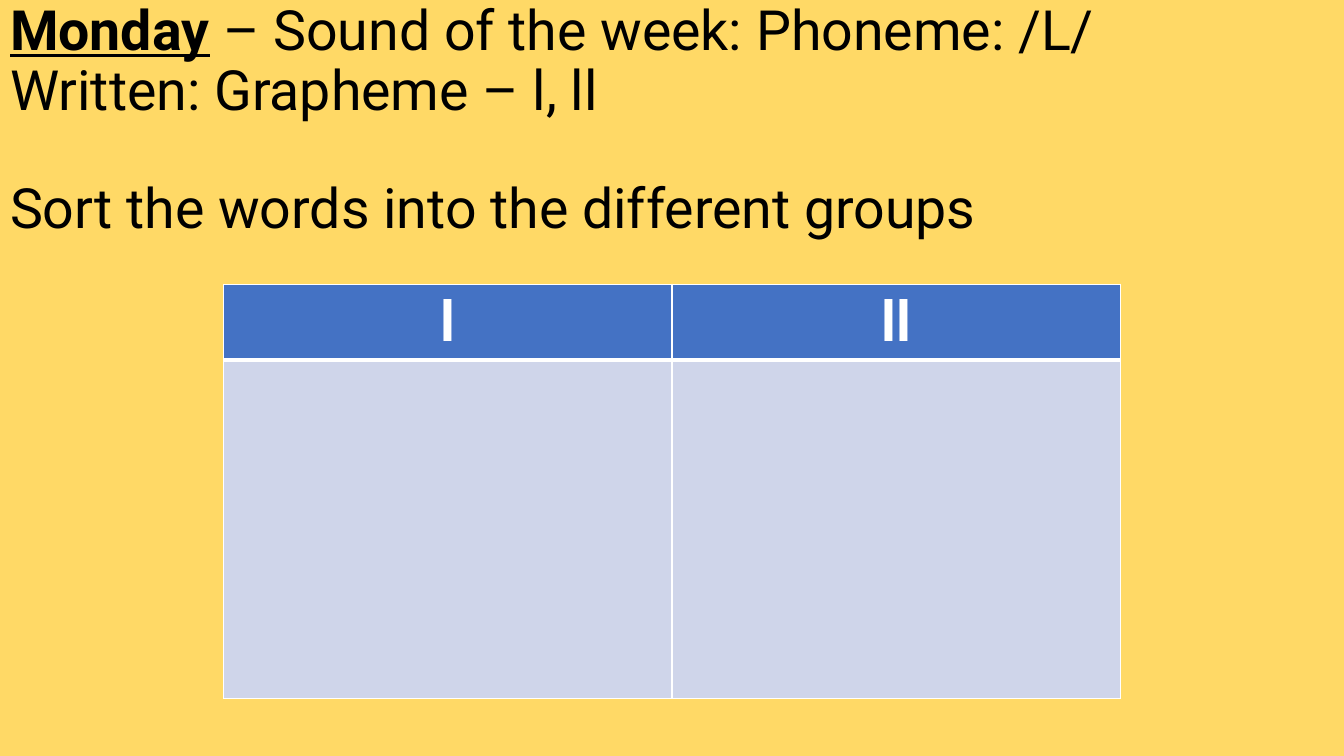
import pptx
import pptx.dml.color
import pptx.enum.text
import pptx.oxml
import pptx.oxml.ns
import pptx.util

Inches = pptx.util.Inches
Pt = pptx.util.Pt
ALIGN = pptx.enum.text.PP_ALIGN
FONT = "Roboto"


def paint(fill, color):
    """Give a fill one solid colour from a hex string."""
    fill.solid()
    fill.fore_color.rgb = pptx.dml.color.RGBColor.from_string(color)


def set_values(target, values):
    """Set each attribute named in a dict of format values."""
    for name, value in values.items():
        setattr(target, name, value)


def add_span(para, text, color, **values):
    """Add a formatted run of text to a paragraph."""
    span = para.add_run()
    span.text = text
    set_values(span.font, {"name": FONT, **values})
    paint(span.font.fill, color)


def fill_title(title):
    """Place the title and write the sound of the week and the task."""
    set_values(title, {"left": Inches(0), "top": Inches(0.48),
                       "width": Inches(11.5), "height": Inches(1.45)})
    frame = title.text_frame
    set_values(frame, {"word_wrap": True,
                       "auto_size": pptx.enum.text.MSO_AUTO_SIZE.NONE,
                       "vertical_anchor": pptx.enum.text.MSO_ANCHOR.MIDDLE})
    sound, task = frame.paragraphs[0], frame.add_paragraph()
    for para, space in ((sound, 0), (task, 42)):
        set_values(para, {"alignment": ALIGN.LEFT, "line_spacing": 0.9,
                          "space_before": Pt(space)})
    size = Pt(39.6)
    add_span(sound, "Monday", "000000", size=size, bold=True, underline=True)
    add_span(sound, " – Sound of the week: Phoneme: /L/ Written: Grapheme – l, ll",
             "000000", size=size, bold=False)
    add_span(task, "Sort the words into the different groups",
             "000000", size=size, bold=False)


def add_border(cell, side, width):
    """Draw a white line on one side (L, R, T or B) of a cell."""
    cell._tc.get_or_add_tcPr().append(pptx.oxml.parse_xml(
        f'<a:ln{side} {pptx.oxml.ns.nsdecls("a")} w="{Pt(width)}"><a:solidFill>'
        f'<a:srgbClr val="FFFFFF"/></a:solidFill></a:ln{side}>'))


def style_cell(cell, color, top, bottom):
    """Fill a cell and draw its four borders."""
    for side, width in (("L", 1), ("R", 1), ("T", top), ("B", bottom)):
        add_border(cell, side, width)
    paint(cell.fill, color)


def add_sorting_table(slide, graphemes):
    """Add a table with one empty sorting column for each grapheme."""
    heights = (Inches(0.74), Inches(3.36))
    table = slide.shapes.add_table(len(heights), len(graphemes), Inches(2.22),
                                   Inches(2.82), Inches(8.89), sum(heights)).table
    for row, height in zip(table.rows, heights):
        row.height = height
    for column, grapheme in enumerate(graphemes):
        header = table.cell(0, column)
        style_cell(header, "4472C4", 1, 3)
        style_cell(table.cell(1, column), "CFD5EA", 3, 1)
        para = header.text_frame.paragraphs[0]
        para.alignment = ALIGN.CENTER
        add_span(para, grapheme, "FFFFFF", size=Pt(40), bold=True)


def main():
    """Build the phoneme sorting slide."""
    deck = pptx.Presentation()
    set_values(deck, {"slide_width": Inches(13.33), "slide_height": Inches(7.5)})
    page = deck.slides.add_slide(deck.slide_layouts[5])
    paint(page.background.fill, "FFD966")
    fill_title(page.shapes.title)
    add_sorting_table(page, ("l", "ll"))
    deck.save("out.pptx")


if __name__ == "__main__":
    main()
